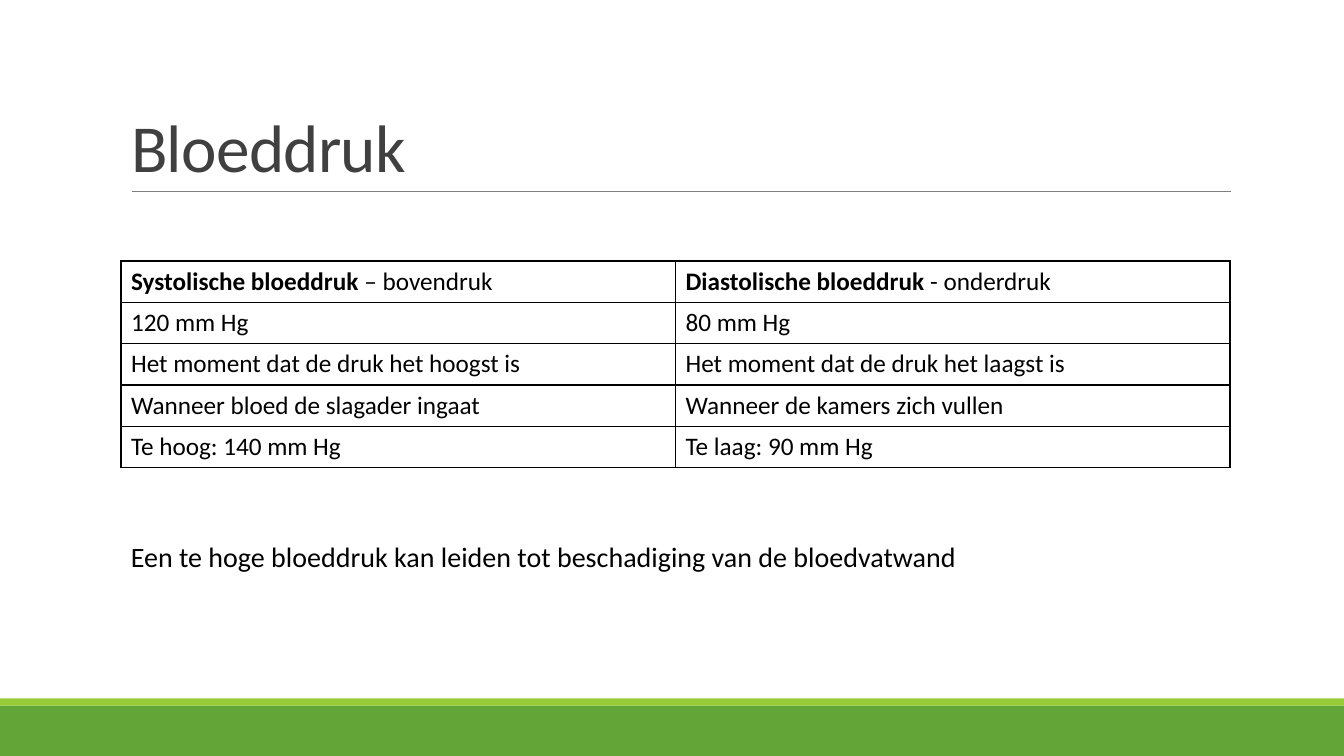
from dataclasses import dataclass
from typing import Any

from lxml.etree import SubElement as Sub
from pptx import Presentation
from pptx.dml.color import RGBColor as Rgb
from pptx.enum.shapes import MSO_CONNECTOR as Conn, MSO_SHAPE as Kind
from pptx.enum.text import MSO_ANCHOR as Anchor, MSO_AUTO_SIZE as Fit, PP_ALIGN as Align
from pptx.oxml.ns import qn
from pptx.util import Emu, Pt

SCALE = 9144  # EMU per px, at 100 px to the inch


@dataclass(frozen=True)
class Theme:
    face: str = "Calibri"
    ink: str = "000000"
    head: str = "404040"
    rule: str = "808080"
    green: str = "63A537"
    lime: str = "99CB38"
    title: int = 48
    cell: int = 18
    note: int = 20


@dataclass(frozen=True)
class Box:
    left: int
    top: int
    width: int
    height: int

    def emu(self) -> tuple[Emu, ...]:
        return tuple(px(n) for n in (self.left, self.top, self.width, self.height))


@dataclass(frozen=True)
class Band:
    box: Box
    color: str


@dataclass(frozen=True)
class Cell:
    text: str
    bold: str = ""


THEME = Theme()
SIZE = (1333, 750)
TITLE = Box(120, 31, 1100, 159)
GRID = Box(120, 259, 1100, 205)
NOTE = Box(120, 530, 1100, 44)
BANDS = [
    Band(Box(0, 700, 1333, 50), THEME.green),
    Band(Box(0, 693, 1333, 7), THEME.lime),
]
ROWS = [
    (Cell("– bovendruk", "Systolische bloeddruk "),
     Cell("- onderdruk", "Diastolische bloeddruk ")),
    (Cell("120 mm Hg"), Cell("80 mm Hg")),
    (Cell("Het moment dat de druk het hoogst is"),
     Cell("Het moment dat de druk het laagst is")),
    (Cell("Wanneer bloed de slagader ingaat"), Cell("Wanneer de kamers zich vullen")),
    (Cell("Te hoog: 140 mm Hg"), Cell("Te laag: 90 mm Hg")),
]


def px(n: int) -> Emu:
    return Emu(n * SCALE)


def put(item: Any, form: dict[str, Any]) -> None:
    for name, value in form.items():
        setattr(item, name, value)


def write(para: Any, text: str, size: int, color: str, bold: bool = False) -> Any:
    run = para.add_run()
    run.text = text
    put(run.font, {"name": THEME.face, "size": Pt(size), "bold": bold})
    run.font.color.rgb = Rgb.from_string(color)
    return run


def add_band(slide: Any, band: Band) -> None:
    shape = slide.shapes.add_shape(Kind.RECTANGLE, *band.box.emu())
    shape.shadow.inherit = False
    shape.fill.solid()
    shape.fill.fore_color.rgb = Rgb.from_string(band.color)
    shape.line.fill.background()


def add_rule(slide: Any) -> None:
    ends = (px(n) for n in (131, 190, 1221, 190))
    rule = slide.shapes.add_connector(Conn.STRAIGHT, *ends)
    rule.line.width = Pt(0.5)
    rule.line.color.rgb = Rgb.from_string(THEME.rule)
    Sub(rule.element.spPr, qn("a:effectLst"))


def set_title(slide: Any) -> None:
    title = slide.shapes.title
    names = ("left", "top", "width", "height")
    put(title, dict(zip(names, TITLE.emu())))
    frame = title.text_frame
    put(frame, {"vertical_anchor": Anchor.BOTTOM, "auto_size": Fit.NONE, "word_wrap": True})
    para = frame.paragraphs[0]
    put(para, {"alignment": Align.LEFT, "line_spacing": 0.85})
    run = write(para, "Bloeddruk", THEME.title, THEME.head)
    run.font._element.set("spc", "-50")


def add_edges(cell: Any) -> None:
    props = cell._tc.get_or_add_tcPr()
    for side in "LRTB":
        edge = Sub(props, qn(f"a:ln{side}"), w=str(Pt(1)))
        fill = Sub(edge, qn("a:solidFill"))
        Sub(fill, qn("a:srgbClr"), val=THEME.ink)


def add_grid(slide: Any) -> None:
    table = slide.shapes.add_table(len(ROWS), len(ROWS[0]), *GRID.emu()).table
    put(table, {"first_row": False, "horz_banding": False})
    for r, row in enumerate(ROWS):
        table.rows[r].height = px(GRID.height // len(ROWS))
        for c, item in enumerate(row):
            cell = table.cell(r, c)
            add_edges(cell)
            cell.fill.background()
            para = cell.text_frame.paragraphs[0]
            if item.bold:
                write(para, item.bold, THEME.cell, THEME.ink, True)
            write(para, item.text, THEME.cell, THEME.ink)


def add_note(slide: Any) -> None:
    frame = slide.shapes.add_textbox(*NOTE.emu()).text_frame
    put(frame, {"word_wrap": True, "auto_size": Fit.SHAPE_TO_FIT_TEXT})
    text = "Een te hoge bloeddruk kan leiden tot beschadiging van de bloedvatwand"
    write(frame.paragraphs[0], text, THEME.note, THEME.ink)


def main() -> None:
    deck = Presentation()
    put(deck, {"slide_width": px(SIZE[0]), "slide_height": px(SIZE[1])})
    slide = deck.slides.add_slide(deck.slide_layouts[5])

    # Footer bands and title rule
    for band in BANDS:
        add_band(slide, band)
    add_rule(slide)

    # Title, table and closing line
    set_title(slide)
    add_grid(slide)
    add_note(slide)
    deck.save("out.pptx")


if __name__ == "__main__":
    main()
